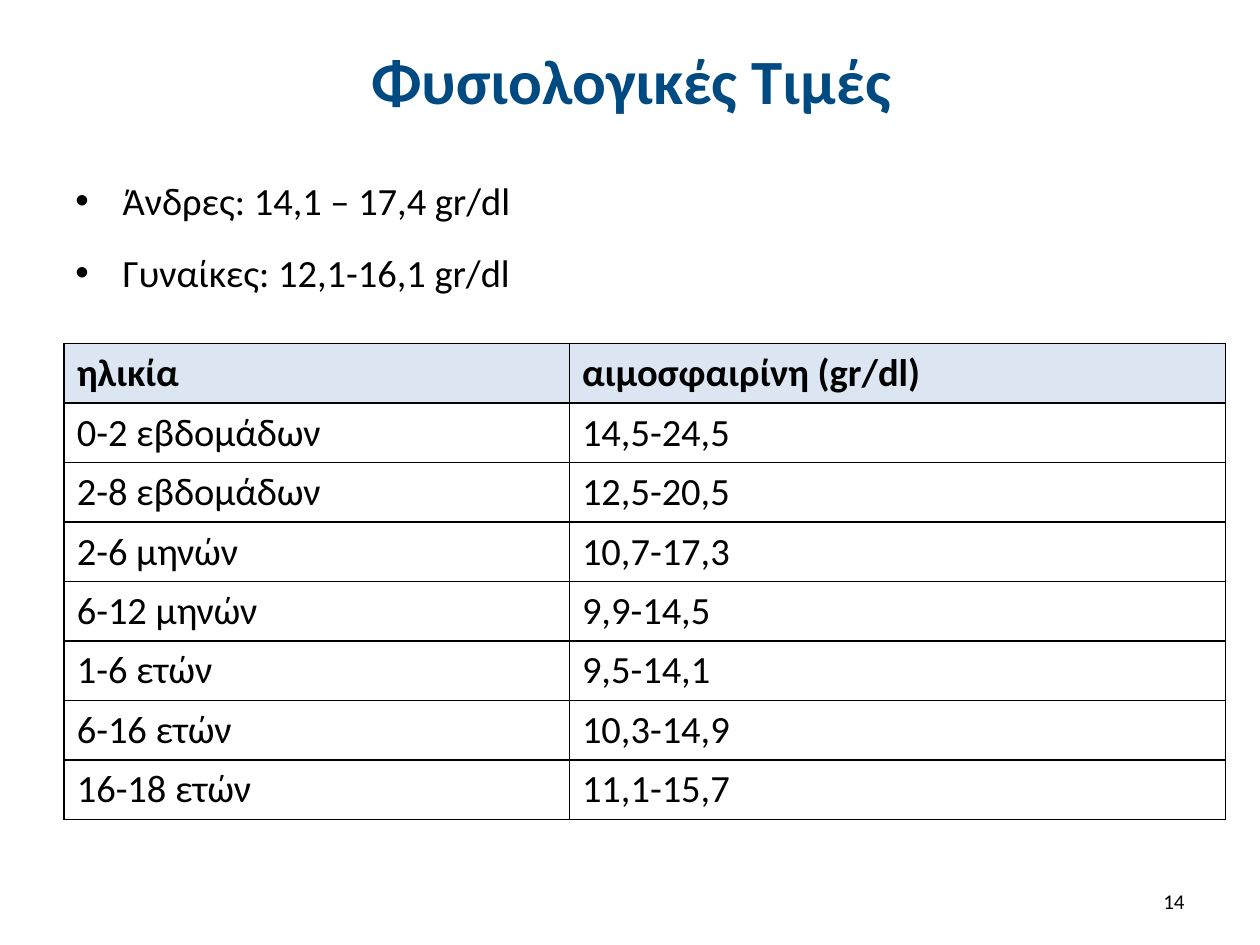
from lxml.etree import SubElement
from pptx import Presentation
from pptx.dml.color import RGBColor
from pptx.enum.text import MSO_ANCHOR, PP_ALIGN
from pptx.oxml.ns import qn
from pptx.util import Pt

FONT = "Calibri"
HUES = {"title": "004A82", "text": "000000", "head": "DCE6F2", "line": "000000"}
RANGES = ["Άνδρες: 14,1 – 17,4 gr/dl", "Γυναίκες: 12,1-16,1 gr/dl"]
ROWS = [
    ("ηλικία", "αιμοσφαιρίνη (gr/dl)"),
    ("0-2 εβδομάδων", "14,5-24,5"),
    ("2-8 εβδομάδων", "12,5-20,5"),
    ("2-6 μηνών", "10,7-17,3"),
    ("6-12 μηνών", "9,9-14,5"),
    ("1-6 ετών", "9,5-14,1"),
    ("6-16 ετών", "10,3-14,9"),
    ("16-18 ετών", "11,1-15,7"),
]
WIDTHS = (288.7, 375)
HEIGHT = 34


def box(left, top, width, height):
    return [Pt(n) for n in (left, top, width, height)]


def style(para, size, hue="text", bold=False, align=None):
    para.alignment = align
    for run in para.runs:
        font = run.font
        font.name, font.size, font.bold = FONT, Pt(size), bold
        font.color.rgb = RGBColor.from_string(HUES[hue])


def add_title(slide, text):
    title = slide.shapes.title
    title.left, title.top, title.width, title.height = box(36.7, 9.4, 648, 71.3)
    frame = title.text_frame
    frame.text = text
    frame.vertical_anchor = MSO_ANCHOR.MIDDLE
    style(frame.paragraphs[0], 36, "title", True, PP_ALIGN.CENTER)


def add_text(slide, place, text, anchor=MSO_ANCHOR.TOP):
    frame = slide.shapes.add_textbox(*box(*place)).text_frame
    frame.word_wrap = True
    frame.vertical_anchor = anchor
    frame.text = text
    return frame.paragraphs


def add_list(slide, items):
    for i, para in enumerate(add_text(slide, (36, 94.3, 648, 396.7), "\n".join(items))):
        props = para._p.get_or_add_pPr()
        props.set("marL", str(Pt(27)))
        props.set("indent", str(-Pt(27)))
        SubElement(props, qn("a:buFont"), typeface="Arial")
        SubElement(props, qn("a:buChar"), char="•")
        para.line_spacing = 1.12
        if i:
            para.space_before = Pt(12)
        style(para, 22)


def add_edges(cell):
    props = cell._tc.get_or_add_tcPr()
    for side in ("lnL", "lnR", "lnT", "lnB"):
        line = SubElement(props, qn(f"a:{side}"), w=str(Pt(1)))
        fill = SubElement(line, qn("a:solidFill"))
        SubElement(fill, qn("a:srgbClr"), val=HUES["line"])


def add_grid(slide, rows):
    place = box(36.7, 196.4, sum(WIDTHS), HEIGHT * len(rows))
    table = slide.shapes.add_table(len(rows), len(WIDTHS), *place).table
    table.horz_banding = False
    for col, width in zip(table.columns, WIDTHS):
        col.width = Pt(width)
    for i, row in enumerate(rows):
        table.rows[i].height = Pt(HEIGHT)
        for j, text in enumerate(row):
            cell = table.cell(i, j)
            cell.text_frame.text = text
            style(cell.text_frame.paragraphs[0], 22, bold=i == 0, align=PP_ALIGN.JUSTIFY)
            add_edges(cell)
            if i:
                cell.fill.background()
            else:
                cell.fill.solid()
                cell.fill.fore_color.rgb = RGBColor.from_string(HUES["head"])


def main():
    deck = Presentation()
    deck.slide_width, deck.slide_height = Pt(720), Pt(540)
    slide = deck.slides.add_slide(deck.slide_layouts[5])
    add_title(slide, "Φυσιολογικές Τιμές")
    add_list(slide, RANGES)
    add_grid(slide, ROWS)
    number = add_text(slide, (516, 500.5, 168, 28.8), "14", MSO_ANCHOR.MIDDLE)
    style(number[0], 12, align=PP_ALIGN.RIGHT)
    deck.save("out.pptx")


if __name__ == "__main__":
    main()
